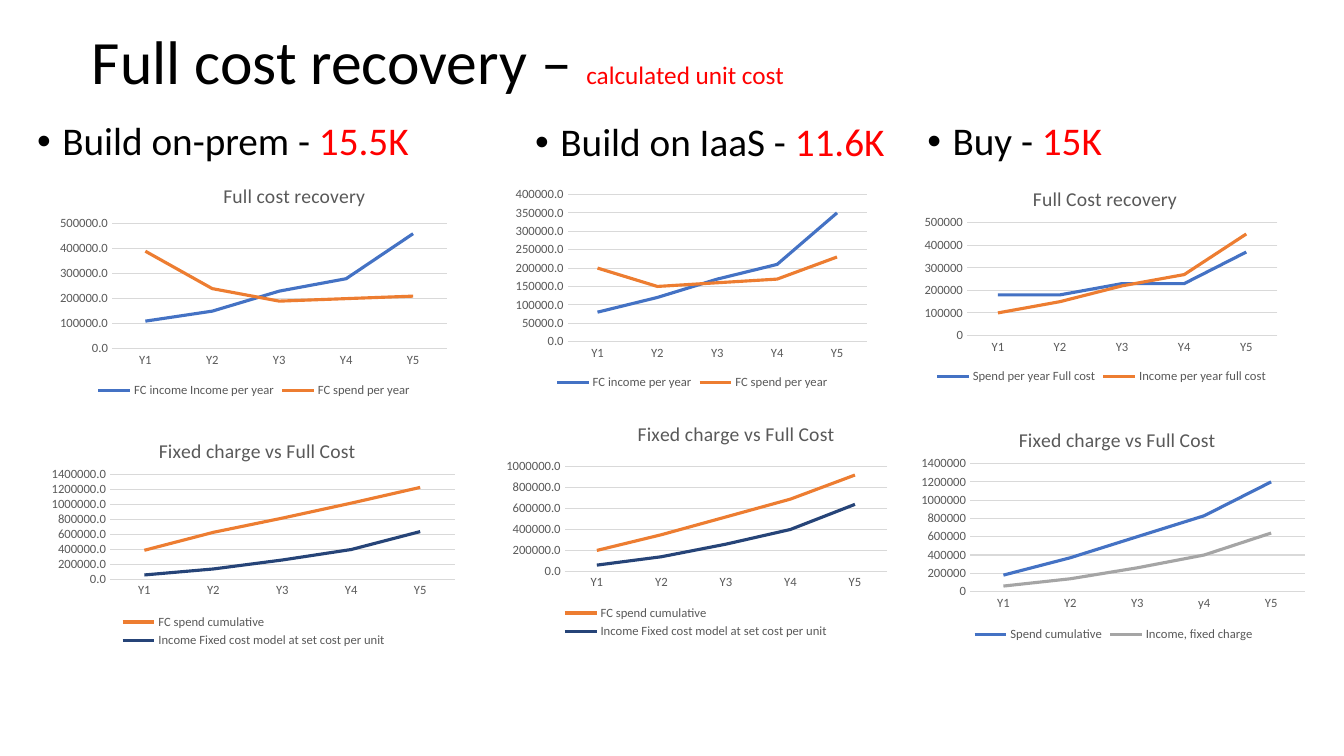
from lxml.etree import SubElement
from pptx import Presentation
from pptx.chart.data import CategoryChartData
from pptx.dml.color import RGBColor
from pptx.enum.chart import XL_CHART_TYPE, XL_LEGEND_POSITION, XL_TICK_MARK
from pptx.enum.text import MSO_ANCHOR, PP_ALIGN
from pptx.oxml import parse_xml
from pptx.oxml.ns import nsdecls, qn
from pptx.util import Emu, Pt

PX = 9144
FONT = "Calibri"
BLACK = RGBColor(0x00, 0x00, 0x00)
RED = RGBColor(0xFF, 0x00, 0x00)
GREY = RGBColor(0x59, 0x59, 0x59)
GRID = RGBColor(0xD9, 0xD9, 0xD9)
BLUE = RGBColor(0x44, 0x72, 0xC4)
ORANGE = RGBColor(0xED, 0x7D, 0x31)
NAVY = RGBColor(0x26, 0x44, 0x78)
SILVER = RGBColor(0xA5, 0xA5, 0xA5)

YEARS = ["Y1", "Y2", "Y3", "Y4", "Y5"]
FIXED_INCOME = [60000, 140000, 260000, 400000, 640000]
FIXED_TITLE = "Fixed charge vs Full Cost"
FIXED_NAME = "Income Fixed cost model at set cost per unit"

HEADINGS = [
    ((27, 116, 494, 521), "Build on-prem - ", "15.5K"),
    ((521, 117, 372, 537), "Build on IaaS - ", "11.6K"),
    ((910, 116, 372, 537), "Buy - ", "15K"),
]

CHARTS = [
    dict(box=(52, 164, 400, 235), plot=(111, 222, 332, 124),
         title="Full cost recovery", title_at=(218, 177),
         top=500000, step=100000, fmt="0.0", series=[
             ("FC income Income per year", [110000, 150000, 230000, 280000, 460000], BLUE),
             ("FC spend per year", [390000, 240000, 190000, 200000, 210000], ORANGE)]),
    dict(box=(505, 182, 363, 209), plot=(563, 193, 297, 146),
         top=400000, step=50000, fmt="0.0", series=[
             ("FC income per year", [80000, 120000, 170000, 210000, 350000], BLUE),
             ("FC spend per year", [200000, 150000, 160000, 170000, 230000], ORANGE)]),
    dict(box=(493, 405, 394, 233), plot=(560, 463, 320, 104),
         title=FIXED_TITLE, title_at=(629, 413),
         top=1000000, step=200000, fmt="0.0", series=[
             ("FC spend cumulative", [200000, 350000, 520000, 690000, 920000], ORANGE),
             (FIXED_NAME, FIXED_INCOME, NAVY)]),
    dict(box=(43, 414, 417, 233), plot=(109, 471, 342, 104),
         title=FIXED_TITLE, title_at=(154, 430),
         top=1400000, step=200000, fmt="0.0", series=[
             ("FC spend cumulative", [390000, 630000, 820000, 1020000, 1230000], ORANGE),
             (FIXED_NAME, FIXED_INCOME, NAVY)]),
    dict(box=(910, 164, 365, 221), plot=(959, 221, 308, 112),
         title="Full Cost recovery", title_at=(1021, 180),
         top=500000, step=100000, series=[
             ("Spend per year Full cost", [180000, 180000, 230000, 230000, 370000], BLUE),
             ("Income per year full cost", [100000, 150000, 220000, 270000, 450000], ORANGE)]),
    dict(box=(906, 403, 397, 238), plot=(962, 460, 332, 127),
         title=FIXED_TITLE, title_at=(1007, 419),
         top=1400000, step=200000, cats=["Y1", "Y2", "Y3", "y4", "Y5"], series=[
             ("Spend cumulative", [180000, 370000, 600000, 830000, 1200000], BLUE),
             ("Income, fixed charge", FIXED_INCOME, SILVER)]),
]


def px(*lengths):
    return [Emu(n * PX) for n in lengths]


def set_font(font, size, color):
    font.name = FONT
    font.size = Pt(size)
    font.bold = False
    font.color.rgb = color


def add_run(p, text, size=28, color=BLACK):
    r = p.add_run()
    r.text = text
    set_font(r.font, size, color)


def add_title(s):
    sp = s.shapes.title
    sp.left, sp.top, sp.width, sp.height = px(81, 24, 1183, 80)
    tf = sp.text_frame
    tf.vertical_anchor = MSO_ANCHOR.MIDDLE
    p = tf.paragraphs[0]
    p.alignment = PP_ALIGN.LEFT
    p.line_spacing = 0.9
    add_run(p, "Full cost recovery – ", size=44)
    add_run(p, "calculated unit cost", size=18, color=RED)


def add_heading(s, box, label, cost):
    tf = s.shapes.add_textbox(*px(*box)).text_frame
    tf.word_wrap = True
    p = tf.paragraphs[0]
    pPr = p._p.get_or_add_pPr()
    pPr.set("marL", str(25 * PX))
    pPr.set("indent", str(-25 * PX))
    SubElement(pPr, qn("a:buFont")).set("typeface", "Arial")
    SubElement(pPr, qn("a:buChar")).set("char", "•")
    p.line_spacing = 0.9
    add_run(p, label)
    add_run(p, cost, color=RED)


def place(element, index, box, area, target=""):
    old = element.find(qn("c:layout"))
    if old is not None:
        element.remove(old)
    left, top, width, height = box
    fractions = [(area[0] - left) / width, (area[1] - top) / height]
    fractions += [n / whole for n, whole in zip(area[2:], (width, height))]
    modes = '<c:xMode val="edge"/><c:yMode val="edge"/>'
    values = "".join(f'<c:{name} val="{n:.4f}"/>' for name, n in zip("xywh", fractions))
    element.insert(index, parse_xml(
        f'<c:layout {nsdecls("c")}><c:manualLayout>{target}{modes}{values}'
        '</c:manualLayout></c:layout>'))


def format_axis(axis):
    axis.major_tick_mark = XL_TICK_MARK.NONE
    axis.minor_tick_mark = XL_TICK_MARK.NONE
    set_font(axis.tick_labels.font, 9, GREY)


def add_line_chart(s, box, plot, top, step, series, title=None, title_at=None,
                   fmt="General", cats=YEARS):
    data = CategoryChartData()
    data.categories = cats
    for name, values, _ in series:
        data.add_series(name, values)
    chart = s.shapes.add_chart(XL_CHART_TYPE.LINE, *px(*box), data).chart
    set_font(chart.font, 10, BLACK)

    chart.has_title = title is not None
    if title:
        p = chart.chart_title.text_frame.paragraphs[0]
        add_run(p, title, size=14, color=GREY)
        place(chart.chart_title._element, 1, box, title_at)

    chart.has_legend = True
    chart.legend.position = XL_LEGEND_POSITION.BOTTOM
    chart.legend.include_in_layout = False
    set_font(chart.legend.font, 9, GREY)

    format_axis(chart.category_axis)
    line = chart.category_axis.format.line
    line.color.rgb = GRID
    line.width = Pt(0.75)

    axis = chart.value_axis
    format_axis(axis)
    axis.format.line.fill.background()
    axis.minimum_scale, axis.maximum_scale, axis.major_unit = 0, top, step
    axis.tick_labels.number_format = fmt
    axis.tick_labels.number_format_is_linked = False
    axis.major_gridlines.format.line.color.rgb = GRID
    axis.major_gridlines.format.line.width = Pt(0.75)

    chart.plots[0].vary_by_categories = False
    for ser, (_, _, color) in zip(chart.plots[0].series, series):
        ser.smooth = False
        ser.format.line.color.rgb = color
        ser.format.line.width = Pt(2.25)
    plot_area = chart._chartSpace.find(".//" + qn("c:plotArea"))
    place(plot_area, 0, box, plot, '<c:layoutTarget val="inner"/>')


def main():
    prs = Presentation()
    prs.slide_width, prs.slide_height = px(1333, 750)
    s = prs.slides.add_slide(prs.slide_layouts[5])
    add_title(s)
    for heading in HEADINGS:
        add_heading(s, *heading)
    for chart in CHARTS:
        add_line_chart(s, **chart)
    prs.save("out.pptx")


if __name__ == "__main__":
    main()
